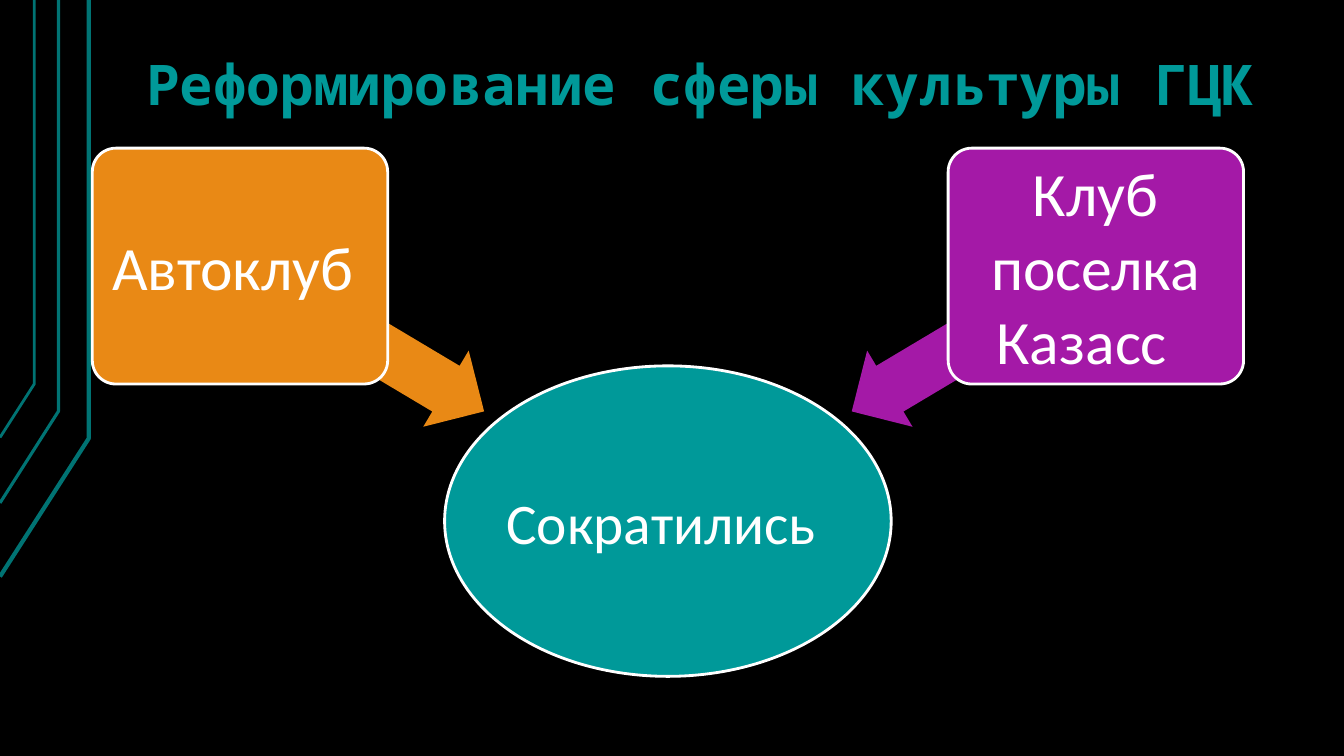
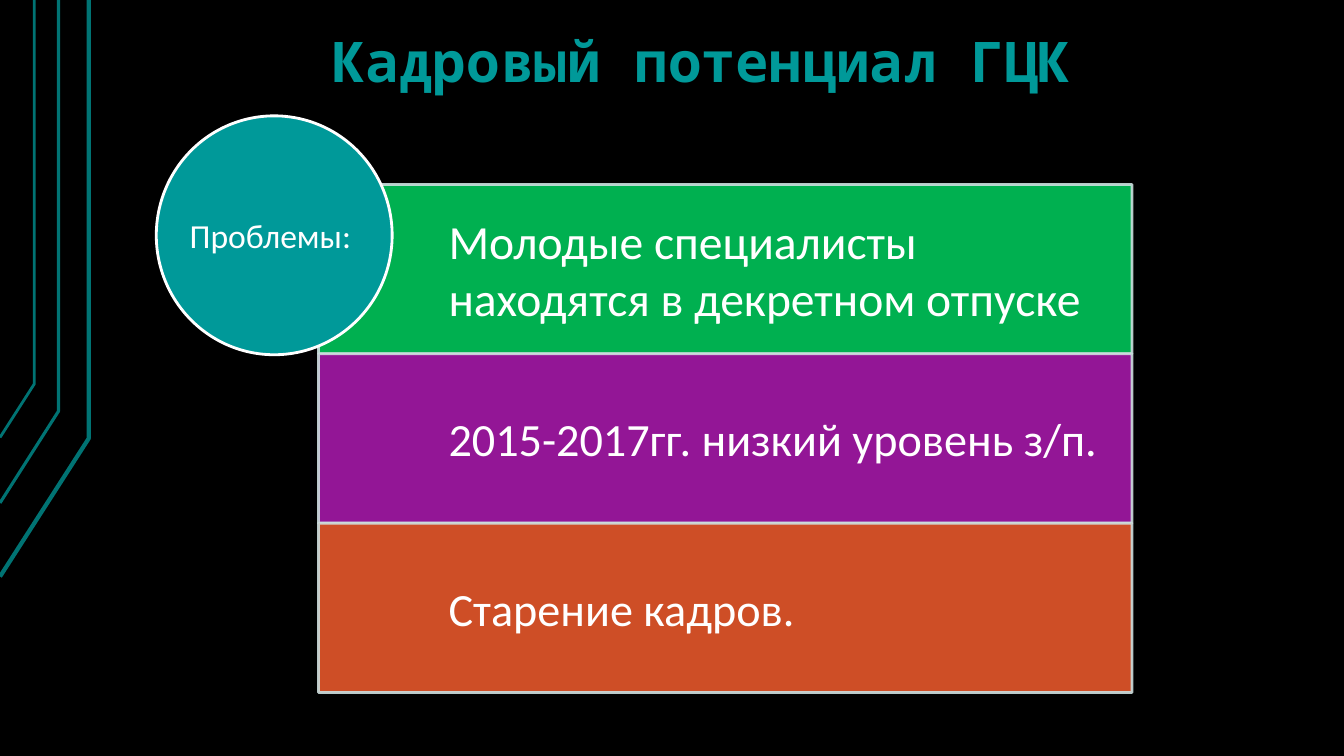
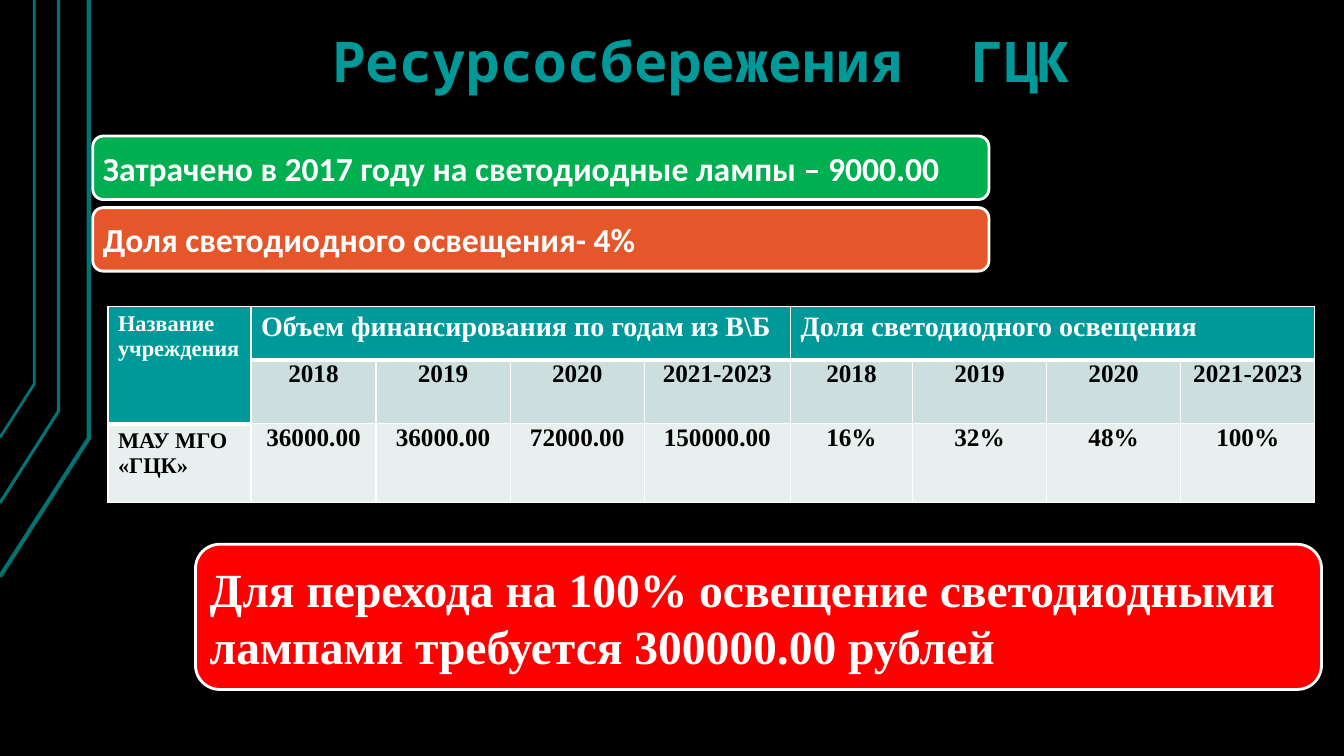
"""Builds three slides on reform, staff and lighting costs of a culture centre."""
from pptx import Presentation
from pptx import util as u
from pptx.dml.color import RGBColor
from pptx.enum import shapes, text
from pptx.oxml import parse_xml
from pptx.oxml.ns import nsdecls, qn

COLORS = {
    "black": "000000", "white": "FFFFFF", "teal": "009999", "stripe": "007373",
    "orange": "E98915", "purple": "A419A7", "green": "00B050", "rust": "E5572B",
    "red": "FF0000", "mist": "CCDEDE", "pale": "E7EFEF",
}
BODY_FONT, TITLE_FONT, TABLE_FONT = "Calibri", "Noto Sans Mono", "Times New Roman"
KIND = shapes.MSO_SHAPE
ALIGN = text.PP_ALIGN

presentation = Presentation()
presentation.slide_width = u.Inches(13.33)
presentation.slide_height = u.Inches(7.5)
column = presentation.slide_width / 100
row = presentation.slide_height / 100
blank = presentation.slide_layouts[6]


def write(frame, words, size, color="white", font=BODY_FONT, bold=False, align=ALIGN.LEFT):
    frame.text = words
    paragraph = frame.paragraphs[0]
    paragraph.alignment = align
    run_font = paragraph.runs[0].font
    run_font.size, run_font.name, run_font.bold = u.Pt(size), font, bold
    run_font.color.rgb = RGBColor.from_string(COLORS[color])


def add_panel(slide, kind, left, top, width, height, fill, line="white", margin=0):
    shape = slide.shapes.add_shape(kind, round(column * left), round(row * top),
                                   round(column * width), round(row * height))
    shape.shadow.inherit = False
    shape.fill.solid()
    shape.fill.fore_color.rgb = RGBColor.from_string(COLORS[fill])
    if line:
        shape.line.color.rgb = RGBColor.from_string(COLORS[line])
        shape.line.width = u.Pt(2)
    else:
        shape.line.fill.background()
    frame = shape.text_frame
    frame.word_wrap = kind != KIND.OVAL
    frame.vertical_anchor = text.MSO_ANCHOR.MIDDLE
    frame.margin_left = frame.margin_right = u.Inches(margin)
    frame.margin_top = frame.margin_bottom = u.Inches(margin)
    frame.paragraphs[0].line_spacing = 0.9
    return shape


background = presentation.slide_master.background.fill
background.solid()
background.fore_color.rgb = RGBColor.from_string(COLORS["black"])

titles = [
    ("Реформирование сферы культуры ГЦК", 7.5, 5.87, 89.2),
    ("Кадровый потенциал ГЦК ", 6.9, 2.8, 93.1),
    ("Ресурсосбережения  ГЦК ", 6.9, 2.8, 93.1),
]
for words, left, top, width in titles:
    slide = presentation.slides.add_slide(blank)
    title = slide.shapes.add_textbox(round(column * left), round(row * top),
                                     round(column * width), round(row * 10.27))
    title.text_frame.word_wrap = True
    title.text_frame.auto_size = text.MSO_AUTO_SIZE.SHAPE_TO_FIT_TEXT
    write(title.text_frame, words, 40, "teal", TITLE_FONT, True, ALIGN.CENTER)
reform, staff, lighting = presentation.slides

for across, bend, foot, weight in [(6.6, 58, 76.27, 3), (4.35, 54.4, 66.53, 2.25),
                                   (2.55, 50.8, 57.87, 2)]:
    builder = reform.shapes.build_freeform(0, round(row * foot))
    builder.add_line_segments([(round(column * across), round(row * bend)),
                               (round(column * across), 0)], close=False)
    stripe = builder.convert_to_shape()
    stripe.shadow.inherit = False
    stripe.fill.background()
    stripe.line.color.rgb = RGBColor.from_string(COLORS["stripe"])
    stripe.line.width = u.Pt(weight)
    blank.shapes.element.append(stripe.element)

axis = 49.7
result = add_panel(reform, KIND.OVAL, axis - 16.62, 48.4, 33.23, 41.07, "teal")
write(result.text_frame, "Сократились ", 41, align=ALIGN.CENTER)
for side, words, color, angle in [(-1, "Автоклуб ", "orange", 30.8),
                                  (1, "Клуб поселка Казасс  ", "purple", 149.2)]:
    arrow = add_panel(reform, KIND.RIGHT_ARROW, axis + side * 22.76 - 10.58, 38.93,
                      21.15, 11.73, color, None)
    arrow.adjustments[0], arrow.adjustments[1] = 0.6, 0.5
    arrow.rotation = angle
    club = add_panel(reform, KIND.ROUNDED_RECTANGLE, axis + side * 31.84 - 10.99, 19.6,
                     21.98, 31.2, color, margin=0.02)
    club.adjustments[0] = 0.1
    write(club.text_frame, words, 44, align=ALIGN.CENTER)

problems = [
    ("Молодые специалисты находятся в декретном отпуске", "green", 34, 1),
    ("2015-2017гг. низкий уровень з/п.", "purple", 33, 0),
    ("Старение кадров.", "rust", 33, 0),
]
for index, (words, color, size, opaque_colors) in enumerate(problems):
    band = add_panel(staff, KIND.RECTANGLE, 23.7, 24.4 + index * 22.4, 60.53, 22.4,
                     color, "mist", 0.26)
    band.text_frame.margin_left = round(column * 9.68)
    write(band.text_frame, words, size)
    for color_element in list(band.element.spPr.iter(qn("a:srgbClr")))[opaque_colors:]:
        color_element.append(parse_xml(f'<a:alpha {nsdecls("a")} val="90000"/>'))
circle = add_panel(staff, KIND.OVAL, 11.63, 15.33, 17.55, 31.6, "teal")
write(circle.text_frame, "Проблемы: ", 24, align=ALIGN.CENTER)

facts = [("Затрачено в 2017 году на светодиодные лампы – 9000.00", "green"),
         ("Доля светодиодного освещения- 4%", "rust")]
for index, (words, color) in enumerate(facts):
    bar = add_panel(lighting, KIND.ROUNDED_RECTANGLE, 6.9, 18 + index * 9.47, 66.68, 8.4,
                    color, margin=0.07)
    write(bar.text_frame, words, 24, bold=True)

years = ["2018", "2019", "2020", "2021-2023"]
records = [
    ["Название учреждения", "Объем финансирования по годам из В\\Б", "", "", "",
     "Доля светодиодного освещения", "", "", ""],
    ["", *years, *years],
    ["МАУ МГО «ГЦК»", "36000.00", "36000.00", "72000.00", "150000.00",
     "16%", "32%", "48%", "100%"],
]
column_shares = [10.65, 9.3, 9.98, 9.98, 10.88, 9.08, 9.98, 9.98, 9.98]
row_shares = [7.07, 8.4, 10.4]
table = lighting.shapes.add_table(
    len(row_shares), len(column_shares), round(column * 8.03), round(row * 40.53),
    round(column * sum(column_shares)), round(row * sum(row_shares))).table
table.first_row = table.horz_banding = False
for table_column, share in zip(table.columns, column_shares):
    table_column.width = round(column * share)
for table_row, share in zip(table.rows, row_shares):
    table_row.height = round(row * share)
table.cell(0, 0).merge(table.cell(1, 0))
table.cell(0, 1).merge(table.cell(0, 4))
table.cell(0, 5).merge(table.cell(0, 8))
for row_index, record in enumerate(records):
    for column_index, words in enumerate(record):
        cell = table.cell(row_index, column_index)
        header_rows = 1 if column_index else 2
        is_header = row_index < header_rows
        weights = {"L": 1, "R": 1, "T": 3 if row_index == header_rows else 1,
                   "B": 3 if is_header else 1}
        properties = cell._tc.get_or_add_tcPr()
        for edge, weight in weights.items():
            properties.append(parse_xml(
                f'<a:ln{edge} {nsdecls("a")} w="{u.Pt(weight)}"><a:solidFill>'
                f'<a:srgbClr val="{COLORS["white"]}"/></a:solidFill></a:ln{edge}>'))
        cell.fill.solid()
        fill = "teal" if is_header else ["teal", "mist", "pale"][row_index]
        cell.fill.fore_color.rgb = RGBColor.from_string(COLORS[fill])
        is_value = row_index > 0 and column_index > 0
        if is_value:
            cell.margin_left = cell.margin_right = u.Inches(0.07)
            cell.margin_top = cell.margin_bottom = 0
        if words:
            size = 16 if column_index == 0 else 18 if is_value else 20
            write(cell.text_frame, words, size, "white" if is_header else "black",
                  TABLE_FONT, True, ALIGN.CENTER if is_value else ALIGN.LEFT)

need = add_panel(lighting, KIND.ROUNDED_RECTANGLE, 14.55, 72, 83.78, 19.2, "red", margin=0.07)
write(need.text_frame,
      "Для перехода на 100% освещение светодиодными лампами требуется 300000.00 рублей",
      34, font=TABLE_FONT, bold=True)

presentation.save("out.pptx")
